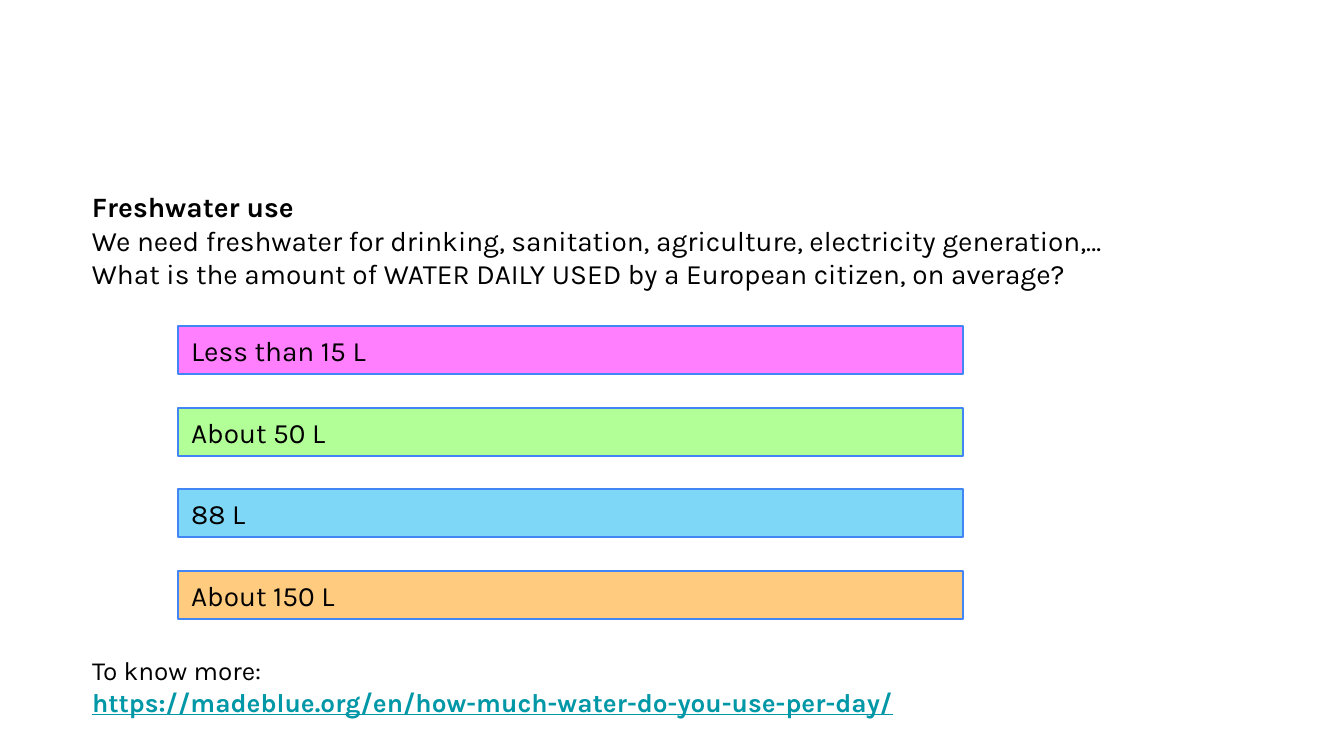
from lxml.etree import SubElement
from pptx import Presentation
from pptx.dml.color import RGBColor
from pptx.enum.shapes import MSO_SHAPE
from pptx.enum.text import MSO_ANCHOR, PP_ALIGN
from pptx.oxml.ns import qn
from pptx.util import Emu, Pt

PX = 914400 / 134.4
COLORS = {
    "text": "000000", "link": "0097A7", "outline": "4285F4",
    "pink": "FF00FF", "green": "66FF33", "blue": "00B0F0", "orange": "FF9900",
}


def px(*lengths):
    return [Emu(round(length * PX)) for length in lengths]


def write(paragraph, text, size, color="text", **font_format):
    run = paragraph.add_run()
    run.text = text
    values = {"name": "Karla", "size": Pt(size), **font_format}
    for attribute, value in values.items():
        setattr(run.font, attribute, value)
    run.font.color.rgb = RGBColor.from_string(COLORS[color])


presentation = Presentation()
presentation.slide_width, presentation.slide_height = px(1344, 756)
slide = presentation.slides.add_slide(presentation.slide_layouts[6])

# Answer bars, evenly spaced
answers = [
    ("Less than 15 L", "pink"),
    ("About 50 L", "green"),
    ("88 L", "blue"),
    ("About 150 L", "orange"),
]
first_top, last_top = 326, 571
for index, (answer, color) in enumerate(answers):
    top = round(first_top + index * (last_top - first_top) / (len(answers) - 1))
    bar = slide.shapes.add_shape(MSO_SHAPE.RECTANGLE, *px(178, top, 785, 48))
    bar.shadow.inherit = False
    bar.fill.solid()
    bar.fill.fore_color.rgb = RGBColor.from_string(COLORS[color])
    fill_color = bar.fill._xPr.find(qn("a:solidFill"))[0]
    SubElement(fill_color, qn("a:alpha"), val="50000")
    bar.line.color.rgb = RGBColor.from_string(COLORS["outline"])
    bar.line.width = Pt(0.75)
    bar.text_frame.vertical_anchor = MSO_ANCHOR.MIDDLE
    label = bar.text_frame.paragraphs[0]
    label.alignment = PP_ALIGN.LEFT
    write(label, answer, 15)

# Question above the bars, source below them
passages = [
    ((92, 183, 1164, 116), 15, [
        ("Freshwater use", {"bold": True}),
        ("We need freshwater for drinking, sanitation, agriculture, "
         "electricity generation,…", {}),
        ("What is the amount of WATER DAILY USED by a European citizen, "
         "on average?", {}),
    ]),
    ((92, 648, 1252, 77), 14, [
        ("To know more:", {}),
        ("https://madeblue.org/en/how-much-water-do-you-use-per-day/",
         {"color": "link", "bold": True, "underline": True}),
    ]),
]
for box, size, lines in passages:
    passage = slide.shapes.add_textbox(*px(*box)).text_frame
    passage.word_wrap = True
    passage.margin_left = 0
    for index, (text, line_format) in enumerate(lines):
        paragraph = passage.add_paragraph() if index else passage.paragraphs[0]
        write(paragraph, text, size, **line_format)

presentation.save("out.pptx")
